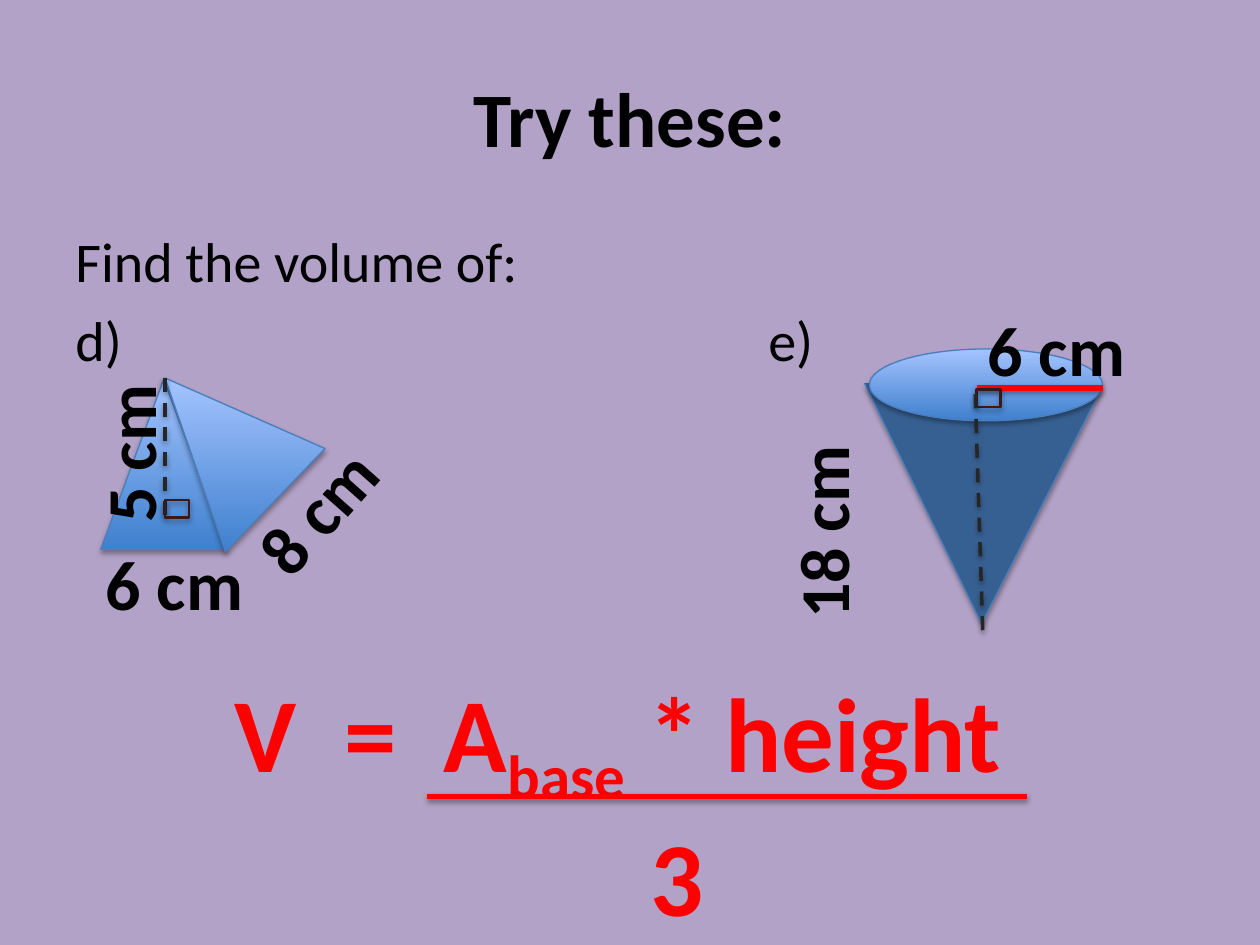
from lxml import etree
from pptx import Presentation
from pptx.dml.color import RGBColor
from pptx.enum.dml import MSO_LINE
from pptx.enum.shapes import MSO_CONNECTOR, MSO_SHAPE
from pptx.enum.text import MSO_ANCHOR, PP_ALIGN
from pptx.oxml.ns import qn
from pptx.util import Inches, Pt

BLACK = RGBColor(0x00, 0x00, 0x00)
RED = RGBColor(0xFF, 0x00, 0x00)
LILAC = RGBColor(0xB3, 0xA2, 0xC7)
NAVY = RGBColor(0x37, 0x60, 0x92)
EDGE = RGBColor(0x4B, 0x7E, 0xBC)
DEEP_BLUE = RGBColor(0x3F, 0x80, 0xCE)
PALE_BLUE = RGBColor(0xA4, 0xC4, 0xFF)
CHARCOAL = RGBColor(0x26, 0x26, 0x26)
MAROON = RGBColor(0x39, 0x1A, 0x1B)

LEFT, CENTER = PP_ALIGN.LEFT, PP_ALIGN.CENTER
MIDDLE = MSO_ANCHOR.MIDDLE
DASH = MSO_LINE.DASH
STRAIGHT = MSO_CONNECTOR.STRAIGHT
OVAL, TRIANGLE, RECTANGLE = MSO_SHAPE.OVAL, MSO_SHAPE.ISOSCELES_TRIANGLE, MSO_SHAPE.RECTANGLE

COLUMNS, ROWS = 100, 75
FONT = "Calibri"
BLUE_BLEND = (DEEP_BLUE, PALE_BLUE)


class GeometrySlide:
    """Draws on one slide; places are (column, row, columns, rows) of the grid."""

    def __init__(self, deck, background):
        self.slide = deck.slides.add_slide(deck.slide_layouts[6])
        self.shapes = self.slide.shapes
        self.column = deck.slide_width / COLUMNS
        self.row = deck.slide_height / ROWS
        fill = self.slide.background.fill
        fill.solid()
        fill.fore_color.rgb = background

    def grid(self, *lengths):
        """Turn alternating column and row counts into slide lengths."""
        units = (self.column, self.row)
        return [round(length * units[i % 2]) for i, length in enumerate(lengths)]

    def shadow(self, element, opacity, distance):
        properties = element._element.spPr
        for old in properties.findall(qn("a:effectLst")):
            properties.remove(old)
        effects = etree.SubElement(properties, qn("a:effectLst"))
        outer = etree.SubElement(effects, qn("a:outerShdw"), blurRad=str(Pt(3.1)),
                                 dist=str(Pt(distance)), dir="5400000", rotWithShape="0")
        color = etree.SubElement(outer, qn("a:srgbClr"), val=str(BLACK))
        etree.SubElement(color, qn("a:alpha"), val=str(opacity * 1000))

    def finish(self, shape, fill, edge, width):
        """A pair of colours gives a blend from bottom to top, None no fill."""
        if fill is None:
            shape.fill.background()
        elif fill == BLUE_BLEND:
            shape.fill.gradient()
            shape.fill.gradient_angle = 90
            for stop, color in zip(shape.fill.gradient_stops, fill):
                stop.color.rgb = color
        else:
            shape.fill.solid()
            shape.fill.fore_color.rgb = fill
        shape.line.color.rgb = edge
        shape.line.width = Pt(width)
        self.shadow(shape, 35, 1.8)

    def solid(self, kind, place, fill=BLUE_BLEND, edge=EDGE, width=0.75):
        self.finish(self.shapes.add_shape(kind, *self.grid(*place)), fill, edge, width)

    def right_angle(self, column, row):
        self.solid(RECTANGLE, (column, row, 1.9, 1.4), None, MAROON, 1.5)

    def outline(self, points, fill, close):
        start, *corners = [self.grid(*point) for point in points]
        builder = self.shapes.build_freeform(*start)
        builder.add_line_segments(corners, close=close)
        self.finish(builder.convert_to_shape(), fill, EDGE, 0.75)

    def segment(self, start, end, color, width, dash=None):
        line = self.shapes.add_connector(STRAIGHT, *self.grid(*start, *end))
        for name, value in {"width": Pt(width), "dash_style": dash}.items():
            setattr(line.line, name, value)
        line.line.color.rgb = color
        self.shadow(line, 38, 1.6)

    def text(self, place, lines, size=40, color=BLACK, bold=True, align=LEFT,
             before=0, rotation=0, anchor=MSO_ANCHOR.TOP):
        """Each line is a list of (words, baseline shift) pairs; gives its paragraphs."""
        box = self.shapes.add_textbox(*self.grid(*place))
        box.rotation = rotation
        frame = box.text_frame
        frame.word_wrap = True
        frame.vertical_anchor = anchor
        for i, pieces in enumerate(lines):
            paragraph = frame.add_paragraph() if i else frame.paragraphs[0]
            paragraph.alignment = align
            paragraph.space_before = Pt(before)
            for words, shift in pieces:
                run = paragraph.add_run()
                run.text = words
                style = {"name": FONT, "size": Pt(size), "bold": bold}
                for name, value in style.items():
                    setattr(run.font, name, value)
                run.font.color.rgb = color
                if shift:
                    run.font._element.set("baseline", str(shift * 1000))
        return frame.paragraphs

    def measure(self, words, column, row, columns=15.2, rotation=0):
        self.text((column, row, columns, 7.7), [[(words, 0)]], rotation=rotation)

    def tab_stop(self, paragraph, columns):
        tabs = etree.SubElement(paragraph._p.get_or_add_pPr(), qn("a:tabLst"))
        etree.SubElement(tabs, qn("a:tab"), pos=str(self.grid(columns)[0]), algn="l")


def main():
    deck = Presentation()
    deck.slide_width, deck.slide_height = Inches(10), Inches(7.5)
    page = GeometrySlide(deck, LILAC)

    # Cone
    page.outline([(68.6, 30.4), (77.9, 49.5), (87.4, 30.9)], NAVY, close=False)
    page.solid(OVAL, (69, 27.7, 18.5, 5.7))

    # Task
    page.text((5, 3, 90, 12.5), [[("Try these:", 0)]], size=44, align=CENTER, anchor=MIDDLE)
    task = page.text((5, 17.5, 90, 49.5), [[("Find the volume of:", 0)], [("d)\te)", 0)]],
                     size=32, bold=False, before=6.4)
    page.tab_stop(task[1], 55)

    # Cone measures and pyramid
    page.measure("6 cm", 7.4, 42.4)
    page.measure("6 cm", 77.4, 23.8)
    page.segment((77.5, 30.8), (87.5, 30.8), RED, 3)
    page.measure("8 cm", 18.3, 35.8, rotation=311.6)
    page.measure("18 cm", 52, 33, columns=26.5, rotation=270)
    apex = (13.1, 30)
    page.solid(TRIANGLE, (8, 30.1, 10, 13.5))
    page.outline([apex, (25.8, 35.6), (17.9, 43.8)], BLUE_BLEND, close=True)

    # Volume formula
    formula = page.text((2.6, 52.5, 92.9, 21.2),
                        [[("V  =  A", 0), ("base", -25), (" * height", 0)], [("3", 0)]],
                        size=60, color=RED, align=CENTER)
    formula[1]._p.get_or_add_pPr().set("marL", str(page.grid(9.4)[0]))
    page.segment((33.9, 63.2), (81.5, 63.2), RED, 3)

    # Heights with their right angles
    page.segment(apex, (13.1, 41.1), CHARCOAL, 2, DASH)
    page.measure("5 cm", 2.6, 31, rotation=270)
    page.right_angle(13.1, 39.7)
    page.right_angle(77.5, 30.9)
    page.segment((77.4, 31.3), (78, 50.2), CHARCOAL, 2, DASH)

    deck.save("out.pptx")


if __name__ == "__main__":
    main()
